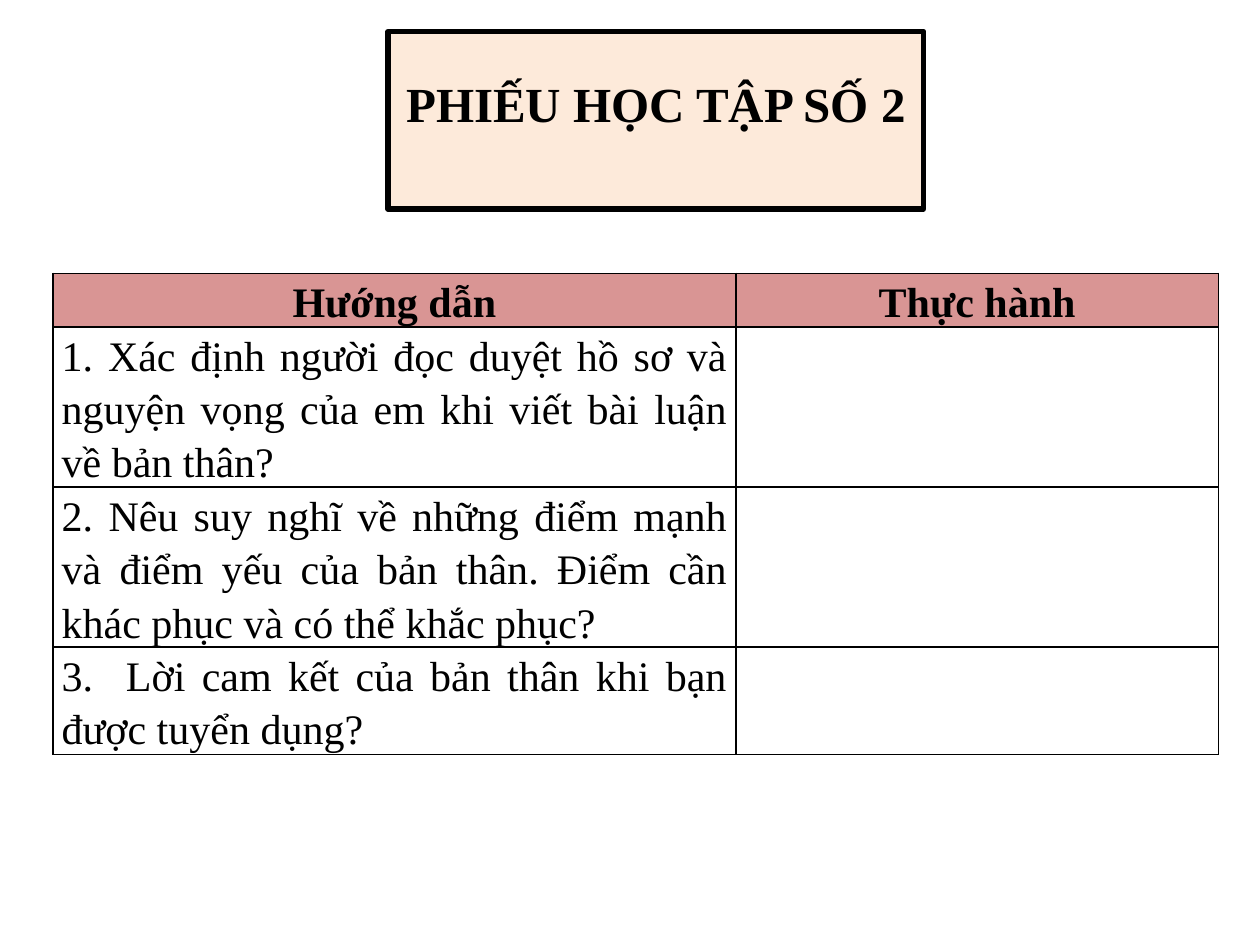
from lxml import etree
from pptx import Presentation
from pptx.dml.color import RGBColor
from pptx.enum import shapes, text
from pptx.oxml import ns
from pptx.util import Inches, Pt

BLACK = RGBColor(0x00, 0x00, 0x00)
ROSE = RGBColor(0xD9, 0x95, 0x94)
CREAM = RGBColor(0xFD, 0xEA, 0xDA)
FONT = "Times New Roman"

COLUMN_WIDTHS = (5.42, 3.83)
ROW_HEIGHTS = (0.42, 1.27, 1.27, 0.85)
ROWS = (
    ("Hướng dẫn", "Thực hành"),
    ("1. Xác định người đọc duyệt hồ sơ và nguyện vọng của em khi viết bài luận về bản thân?", ""),
    ("2. Nêu suy nghĩ về những điểm mạnh và điểm yếu của bản thân. "
     "Điểm cần khác phục và có thể khắc phục?", ""),
    ("3.  Lời cam kết của bản thân khi bạn được tuyển dụng?", ""),
)


def set_all(obj, **values):
    for name, value in values.items():
        setattr(obj, name, value)


def write(tf, words, size, bold, align, spacing=1.0):
    p = tf.paragraphs[0]
    set_all(p, alignment=align, line_spacing=spacing)
    r = p.add_run()
    r.text = words
    set_all(r.font, name=FONT, size=Pt(size), bold=bold)
    r.font.color.rgb = BLACK


def add_borders(cell):
    tc_pr = cell._tc.get_or_add_tcPr()
    for i, edge in enumerate(("lnL", "lnR", "lnT", "lnB")):
        ln = etree.Element(ns.qn(f"a:{edge}"), w=str(Pt(1)))
        fill = etree.SubElement(ln, ns.qn("a:solidFill"))
        etree.SubElement(fill, ns.qn("a:srgbClr"), val=str(BLACK))
        tc_pr.insert(i, ln)


def format_cell(cell, words, header):
    set_all(cell, margin_left=Inches(0.07), margin_right=Inches(0.07),
            margin_top=0, margin_bottom=0)
    if header:
        cell.fill.solid()
        cell.fill.fore_color.rgb = ROSE
    else:
        cell.fill.background()
    if words:
        align = text.PP_ALIGN.CENTER if header else text.PP_ALIGN.JUSTIFY
        write(cell.text_frame, words, 24, header, align, 1.15)
    add_borders(cell)


def add_worksheet(s):
    tbl = s.shapes.add_table(
        len(ROWS), len(COLUMN_WIDTHS), Inches(0.42), Inches(2.17),
        Inches(sum(COLUMN_WIDTHS)), Inches(sum(ROW_HEIGHTS))).table
    set_all(tbl, first_row=False, horz_banding=False)
    for column, width in zip(tbl.columns, COLUMN_WIDTHS):
        column.width = Inches(width)
    for i, (row, height) in enumerate(zip(tbl.rows, ROW_HEIGHTS)):
        row.height = Inches(height)
        for cell, words in zip(row.cells, ROWS[i]):
            format_cell(cell, words, header=i == 0)


def add_title_box(s, words):
    sp = s.shapes.add_shape(shapes.MSO_SHAPE.RECTANGLE, Inches(3.08),
                            Inches(0.25), Inches(4.25), Inches(1.41))
    sp.shadow.inherit = False
    sp.fill.solid()
    sp.fill.fore_color.rgb = CREAM
    sp.line.color.rgb = BLACK
    sp.line.width = Pt(3)
    tf = sp.text_frame
    set_all(tf, word_wrap=True, vertical_anchor=text.MSO_ANCHOR.TOP,
            margin_top=Inches(0.33))
    write(tf, words, 28, True, text.PP_ALIGN.CENTER)


def main():
    prs = Presentation()
    set_all(prs, slide_width=Inches(10), slide_height=Inches(7.5))
    s = prs.slides.add_slide(prs.slide_layouts[6])
    add_worksheet(s)
    add_title_box(s, "PHIẾU HỌC TẬP SỐ 2")
    prs.save("out.pptx")


if __name__ == "__main__":
    main()
